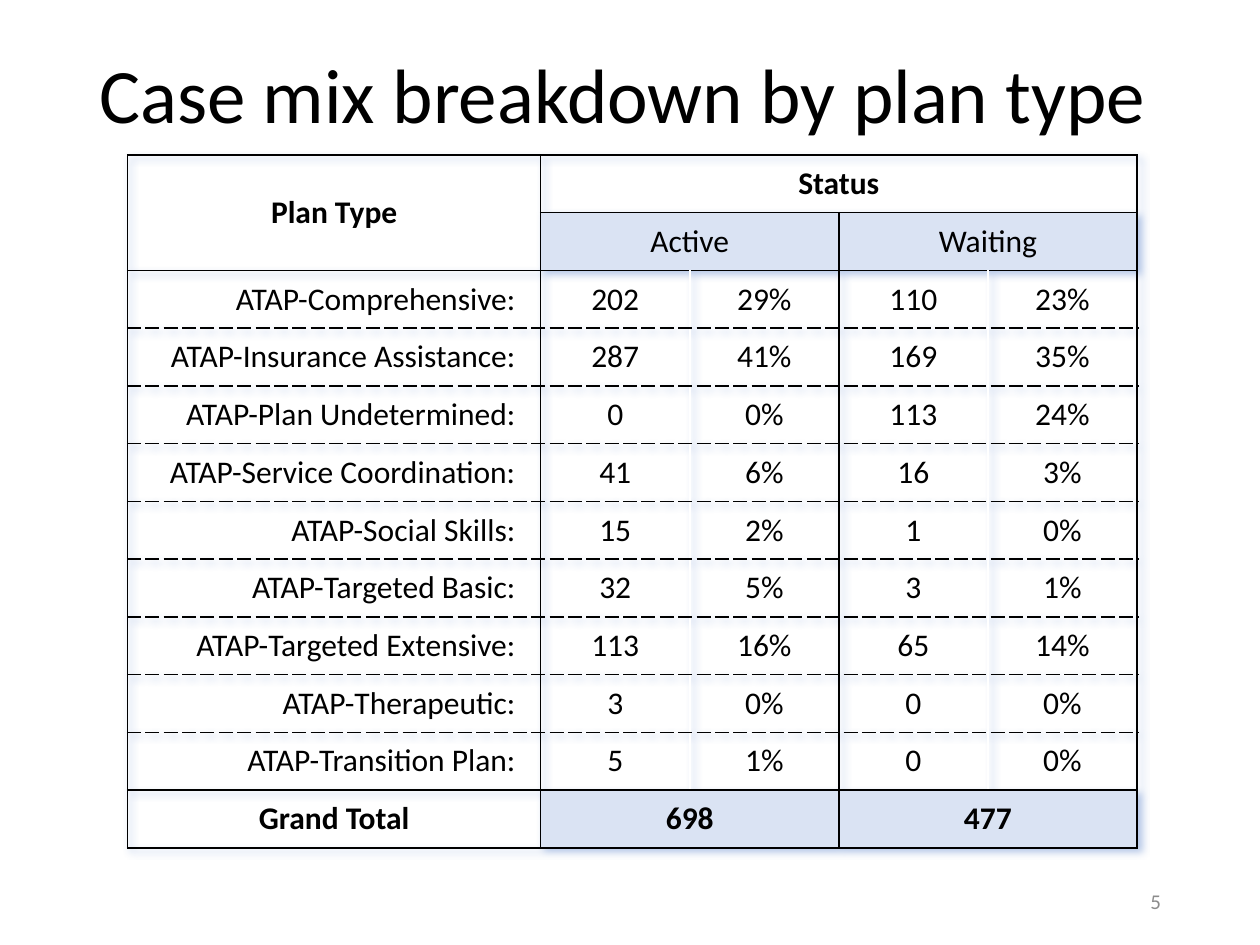
from lxml.etree import SubElement
from pptx import Presentation
from pptx.dml.color import RGBColor
from pptx.enum.text import MSO_ANCHOR as Anchor, MSO_AUTO_SIZE as AutoSize, PP_ALIGN as Align
from pptx.oxml import parse_xml
from pptx.oxml.ns import qn
from pptx.util import Pt


def format_text(paragraph, size, color, alignment, bold=False):
    paragraph.alignment = alignment
    for run in paragraph.runs:
        run.font.name = "Calibri"
        run.font.size = Pt(size)
        run.font.bold = bold
        run.font.color.rgb = RGBColor.from_string(color)


def add_border(cell, side, color, dash):
    line = SubElement(cell._tc.get_or_add_tcPr(), qn(f"a:ln{side}"), w=str(Pt(1)))
    fill = SubElement(line, qn("a:solidFill"))
    SubElement(fill, qn("a:srgbClr"), val=color)
    SubElement(line, qn("a:prstDash"), val=dash)


BLACK, WHITE, GREY, PALE_BLUE = "000000", "FFFFFF", "8C8C8C", "DAE3F3"

rows = [
    ("Plan Type", "Status", "", "", ""),
    ("", "Active", "", "Waiting", ""),
    ("ATAP-Comprehensive:", "202", "29%", "110", "23%"),
    ("ATAP-Insurance Assistance:", "287", "41%", "169", "35%"),
    ("ATAP-Plan Undetermined:", "0", "0%", "113", "24%"),
    ("ATAP-Service Coordination:", "41", "6%", "16", "3%"),
    ("ATAP-Social Skills:", "15", "2%", "1", "0%"),
    ("ATAP-Targeted Basic:", "32", "5%", "3", "1%"),
    ("ATAP-Targeted Extensive:", "113", "16%", "65", "14%"),
    ("ATAP-Therapeutic:", "3", "0%", "0", "0%"),
    ("ATAP-Transition Plan:", "5", "1%", "0", "0%"),
    ("Grand Total", "698", "", "477", ""),
]
first_plan, total_row = 2, len(rows) - 1
column_widths = [236] + [85.2] * 4
row_height = 33

presentation = Presentation()
presentation.slide_width, presentation.slide_height = Pt(720), Pt(540)
slide = presentation.slides.add_slide(presentation.slide_layouts[5])

title = slide.shapes.title
title.left, title.top, title.width, title.height = Pt(49.5), Pt(28.75), Pt(621), Pt(104.4)
title.text_frame.text = "Case mix breakdown by plan type"
title.text_frame.auto_size = AutoSize.NONE
title.text_frame.vertical_anchor = Anchor.TOP
title_paragraph = title.text_frame.paragraphs[0]
title_paragraph.line_spacing = 0.9
format_text(title_paragraph, 44, BLACK, Align.LEFT)

table = slide.shapes.add_table(
    len(rows), len(column_widths), Pt(73), Pt(88.5), Pt(sum(column_widths)), Pt(row_height * len(rows))
).table
table.first_row = table.horz_banding = False
table._tbl.tblPr.insert(0, parse_xml(
    '<a:effectLst xmlns:a="http://schemas.openxmlformats.org/drawingml/2006/main">'
    '<a:outerShdw blurRad="50800" dist="38100" dir="2700000" algn="tl" rotWithShape="0">'
    '<a:srgbClr val="4472C4"><a:alpha val="40000"/></a:srgbClr></a:outerShdw></a:effectLst>'
))
for column, width in zip(table.columns, column_widths):
    column.width = Pt(width)

for row_index, values in enumerate(rows):
    table.rows[row_index].height = Pt(row_height)
    is_plan = first_plan <= row_index < total_row
    for column_index, value in enumerate(values):
        cell = table.cell(row_index, column_index)
        is_label = is_plan and column_index == 0
        is_shaded = row_index in (1, total_row) and column_index > 0
        cell.text_frame.text = value
        cell.vertical_anchor = Anchor.MIDDLE
        cell.margin_left = cell.margin_top = cell.margin_bottom = 0
        cell.margin_right = Pt(14.4 if is_label else 0)
        format_text(cell.text_frame.paragraphs[0], 18, BLACK,
                    Align.RIGHT if is_label else Align.CENTER, row_index in (0, total_row))

        add_border(cell, "L", WHITE if is_plan and column_index in (2, 4) else BLACK, "solid")
        add_border(cell, "R", WHITE if is_plan and column_index in (1, 3) else BLACK, "solid")
        add_border(cell, "T", BLACK, "dash" if is_plan and row_index > first_plan else "solid")
        add_border(cell, "B", BLACK, "dash" if is_plan and row_index < total_row - 1 else "solid")
        if is_shaded:
            cell.fill.solid()
            cell.fill.fore_color.rgb = RGBColor.from_string(PALE_BLUE)
        else:
            cell.fill.background()

table.cell(0, 0).merge(table.cell(1, 0))
table.cell(0, 1).merge(table.cell(0, 4))
for row_index in (1, total_row):
    for column_index in (1, 3):
        table.cell(row_index, column_index).merge(table.cell(row_index, column_index + 1))

page_number = slide.shapes.add_textbox(Pt(508.5), Pt(500.5), Pt(162), Pt(28.75))
page_number.text_frame.text = "5"
page_number.text_frame.word_wrap = True
page_number.text_frame.vertical_anchor = Anchor.MIDDLE
format_text(page_number.text_frame.paragraphs[0], 12, GREY, Align.RIGHT)

presentation.save("out.pptx")
